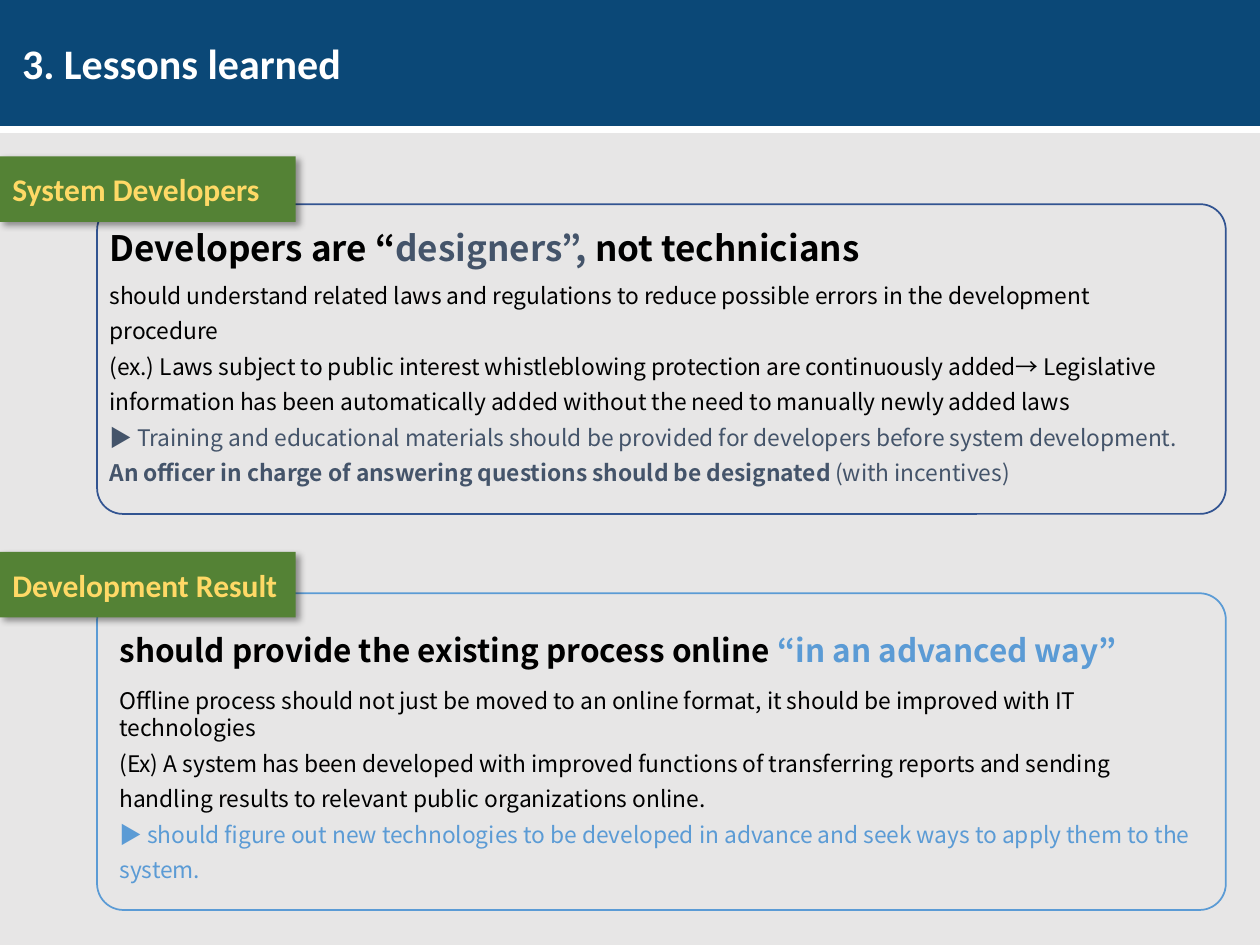
from dataclasses import dataclass
from typing import NamedTuple

from lxml.etree import SubElement
from pptx import Presentation
from pptx.dml.color import RGBColor
from pptx.enum.shapes import MSO_SHAPE
from pptx.enum.text import MSO_ANCHOR, PP_ALIGN
from pptx.oxml.ns import qn
from pptx.util import Pt


@dataclass(frozen=True)
class Theme:
    background: str = "E7E6E6"
    banner: str = "0B4877"
    white: str = "FFFFFF"
    black: str = "000000"
    tab: str = "548235"
    tab_text: str = "FFD966"
    navy: str = "325491"
    slate: str = "44546A"
    sky: str = "5B9BD5"
    label_font: str = "Calibri"
    body_font: str = "Noto Sans CJK KR"
    title_size: float = 24
    tab_size: float = 18
    body_size: float = 13


THEME = Theme()


class Area(NamedTuple):
    left: float
    top: float
    width: float
    height: float

    def lengths(self) -> list:
        return [Pt(value) for value in self]


class Shadow(NamedTuple):
    color: str
    opacity: int
    blur: float
    distance: float
    angle: int


class Span(NamedTuple):
    text: str
    color: str = THEME.black
    bold: bool = False


class Line(NamedTuple):
    spans: list[Span]
    spacing: float = 1.3


@dataclass(frozen=True)
class Section:
    label: str
    tab_top: float
    frame: Area
    frame_color: str
    heading_area: Area
    heading_size: float
    heading: list[Span]
    body_area: Area
    body: list[Line]


def add_shadow(shape, shadow: Shadow) -> None:
    effects = shape._element.spPr.find(qn("a:effectLst"))
    outer = SubElement(effects, qn("a:outerShdw"), blurRad=str(Pt(shadow.blur)),
                       dist=str(Pt(shadow.distance)), dir=str(shadow.angle * 60000),
                       algn="tl", rotWithShape="0")
    color = SubElement(outer, qn("a:srgbClr"), val=shadow.color)
    SubElement(color, qn("a:alpha"), val=str(shadow.opacity * 1000))


def style_span(run, span: Span, font: str, size: float) -> None:
    run.text = span.text
    run.font.name = font
    run.font.size = Pt(size)
    run.font.bold = span.bold
    run.font.color.rgb = RGBColor.from_string(span.color)
    # Symbols such as arrows take the East Asian font
    SubElement(run.font._element, qn("a:ea"), typeface=font)


def add_label(slide, area: Area, fill: str, shadow: Shadow, span: Span,
              size: float, inset: float = 7.2) -> None:
    box = slide.shapes.add_shape(MSO_SHAPE.RECTANGLE, *area.lengths())
    box.shadow.inherit = False
    add_shadow(box, shadow)
    box.fill.solid()
    box.fill.fore_color.rgb = RGBColor.from_string(fill)
    box.line.fill.background()
    frame = box.text_frame
    frame.margin_left = Pt(inset)
    frame.vertical_anchor = MSO_ANCHOR.MIDDLE
    para = frame.paragraphs[0]
    para.alignment = PP_ALIGN.LEFT
    style_span(para.add_run(), span, THEME.label_font, size)


def add_frame(slide, area: Area, color: str) -> None:
    box = slide.shapes.add_shape(MSO_SHAPE.ROUNDED_RECTANGLE, *area.lengths())
    box.adjustments[0] = 0.083
    box.shadow.inherit = False
    box.fill.background()
    box.line.color.rgb = RGBColor.from_string(color)
    box.line.width = Pt(1)


def add_text(slide, area: Area, lines: list[Line], size: float) -> None:
    frame = slide.shapes.add_textbox(*area.lengths()).text_frame
    frame.word_wrap = True
    for index, line in enumerate(lines):
        para = frame.add_paragraph() if index else frame.paragraphs[0]
        para.line_spacing = line.spacing
        for span in line.spans:
            style_span(para.add_run(), span, THEME.body_font, size)


def add_section(slide, section: Section) -> None:
    add_frame(slide, section.frame, section.frame_color)
    add_text(slide, section.heading_area, [Line(section.heading, 1.0)],
             section.heading_size)
    add_text(slide, section.body_area, section.body, THEME.body_size)
    add_label(slide, Area(0, section.tab_top, 169, 37.5), THEME.tab,
              Shadow(THEME.black, 40, 4, 3, 45),
              Span(section.label, THEME.tab_text, True), THEME.tab_size)


SECTIONS = [
    Section(
        "System Developers", 89.3, Area(55.5, 116.7, 645, 177), THEME.navy,
        Area(55.5, 126, 523.5, 31.5), 20,
        [Span("Developers are “", bold=True),
         Span("designers”,", THEME.slate, True),
         Span(" not technicians", bold=True)],
        Area(55.5, 152.6, 632, 148.3),
        [Line([Span("should understand related laws and regulations to reduce "
                    "possible errors in the development procedure")]),
         Line([Span("(ex.) Laws subject to public interest whistleblowing protection "
                    "are continuously added→ Legislative information has been "
                    "automatically added without the need to manually newly added laws")]),
         Line([Span("▶ Training and educational materials should be provided for "
                    "developers before system development.", THEME.slate),
               Span(" An officer in charge of answering questions should be "
                    "designated ", THEME.slate, True),
               Span("(with incentives)", THEME.slate)])],
    ),
    Section(
        "Development Result", 315.3, Area(55.5, 339, 645, 181), THEME.sky,
        Area(61.2, 357, 684, 29), 18,
        [Span("should provide the existing process online ", bold=True),
         Span("“in an advanced way”", THEME.sky, True)],
        Area(61.2, 388.8, 628, 118),
        [Line([Span("Offline process should not just be moved to an online format, "
                    "it should be improved with IT technologies")], 1.0),
         Line([Span("(Ex) A system has been developed with improved functions of "
                    "transferring reports and sending handling results to relevant "
                    "public organizations online.")]),
         Line([Span("▶ should figure out new technologies to be developed in advance "
                    "and seek ways to apply them to the system.", THEME.sky)])],
    ),
]


def main() -> None:
    deck = Presentation()
    deck.slide_width, deck.slide_height = Pt(720), Pt(540)
    slide = deck.slides.add_slide(deck.slide_layouts[6])
    slide.background.fill.solid()
    slide.background.fill.fore_color.rgb = RGBColor.from_string(THEME.background)

    # Title banner with a white edge below
    add_label(slide, Area(0, 0, 720, 72), THEME.banner,
              Shadow(THEME.white, 100, 0, 4, 90),
              Span("3. Lessons learned", THEME.white, True), THEME.title_size, 12.6)

    # Framed sections with their tabs
    for section in SECTIONS:
        add_section(slide, section)

    deck.save("out.pptx")


if __name__ == "__main__":
    main()
